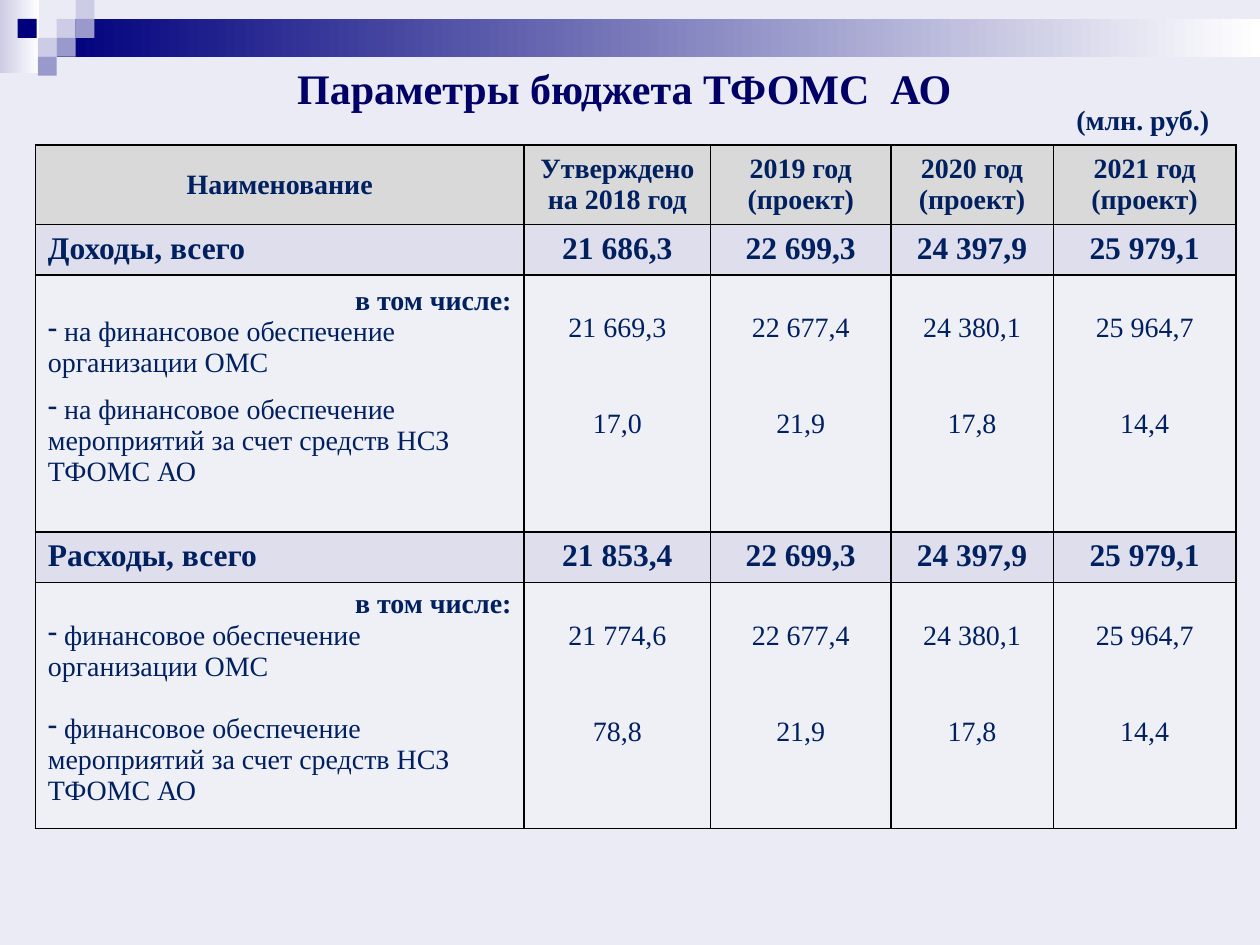
"""Build the budget parameters slide: decorative header band, title and budget table."""
import dataclasses

import lxml.etree
import pptx
import pptx.dml.color
import pptx.enum.shapes
import pptx.enum.text
import pptx.oxml.ns
import pptx.util

Inches = pptx.util.Inches
Pt = pptx.util.Pt
Align = pptx.enum.text.PP_ALIGN
Anchor = pptx.enum.text.MSO_ANCHOR


@dataclasses.dataclass(frozen=True)
class Theme:
    font: str = "Times New Roman"
    background: str = "EBEBF5"
    navy: str = "00007D"
    lilac: str = "CCCCE6"
    violet: str = "9999CC"
    white: str = "FFFFFF"
    title: str = "000066"
    ink: str = "002060"
    header: str = "D9D9D9"
    total: str = "DEDEEC"
    detail: str = "EFEFF6"
    border: str = "000000"
    title_size: int = 24
    total_size: int = 18
    body_size: int = 16


def rgb(code):
    return pptx.dml.color.RGBColor.from_string(code)


class BudgetSlide:
    def __init__(self, deck, theme):
        self.theme = theme
        self.slide = deck.slides.add_slide(deck.slide_layouts[6])
        self.slide.background.fill.solid()
        self.slide.background.fill.fore_color.rgb = rgb(theme.background)

    def block(self, left, top, width, height, color, fade_to=None):
        rectangle = self.slide.shapes.add_shape(
            pptx.enum.shapes.MSO_SHAPE.RECTANGLE,
            Inches(left), Inches(top), Inches(width), Inches(height))
        rectangle.shadow.inherit = False
        rectangle.line.fill.background()
        if fade_to is None:
            rectangle.fill.solid()
            rectangle.fill.fore_color.rgb = rgb(color)
        else:
            rectangle.fill.gradient()
            rectangle.fill.gradient_angle = 0
            for stop, code in zip(rectangle.fill.gradient_stops, (color, fade_to)):
                stop.color.rgb = rgb(code)

    def style(self, paragraph, size, color, bold, align):
        paragraph.alignment = align
        for run in paragraph.runs:
            run.font.name = self.theme.font
            run.font.size = Pt(size)
            run.font.bold = bold
            run.font.color.rgb = rgb(color)

    def caption(self, left, top, width, height, text, size, color):
        frame = self.slide.shapes.add_textbox(
            Inches(left), Inches(top), Inches(width), Inches(height)).text_frame
        frame.word_wrap = True
        frame.vertical_anchor = Anchor.MIDDLE
        frame.text = text
        self.style(frame.paragraphs[0], size, color, True, Align.CENTER)

    def table(self, left, top, widths, heights):
        grid = self.slide.shapes.add_table(
            len(heights), len(widths), Inches(left), Inches(top),
            Inches(sum(widths)), Inches(sum(heights))).table
        for column, width in zip(grid.columns, widths):
            column.width = Inches(width)
        for row, height in zip(grid.rows, heights):
            row.height = Inches(height)
        return grid

    def cell(self, cell, text, fill, size, bold=False, align=Align.CENTER,
             anchor=Anchor.TOP, top=0.05, side=0.1):
        properties = cell._tc.get_or_add_tcPr()
        for edge in ("a:lnL", "a:lnR", "a:lnT", "a:lnB"):
            line = lxml.etree.SubElement(properties, pptx.oxml.ns.qn(edge), w=str(Pt(1)))
            solid = lxml.etree.SubElement(line, pptx.oxml.ns.qn("a:solidFill"))
            lxml.etree.SubElement(solid, pptx.oxml.ns.qn("a:srgbClr"), val=self.theme.border)
        cell.fill.solid()
        cell.fill.fore_color.rgb = rgb(fill)
        cell.vertical_anchor = anchor
        cell.margin_top = Inches(top)
        cell.margin_left = cell.margin_right = Inches(side)
        cell.text_frame.text = text
        for paragraph in cell.text_frame.paragraphs:
            self.style(paragraph, size, self.theme.ink, bold, align)
        return cell.text_frame.paragraphs

    def header_row(self, cells, labels):
        for cell, label in zip(cells, labels):
            self.cell(cell, label, self.theme.header, self.theme.body_size, True,
                      anchor=Anchor.MIDDLE, side=0.04)

    def total_row(self, cells, name, amounts):
        for index, (cell, text) in enumerate(zip(cells, [name, *amounts])):
            self.cell(cell, text, self.theme.total, self.theme.total_size, True,
                      Align.CENTER if index else Align.LEFT)

    def detail_row(self, cells, items, amounts, top, gap):
        name_cell, *amount_cells = cells
        size, fill = self.theme.body_size, self.theme.detail
        lead, *entries = self.cell(name_cell, "\n".join(["в том числе:", *items]),
                                   fill, size, align=Align.LEFT, top=top)
        self.style(lead, size, self.theme.ink, True, Align.RIGHT)
        for entry in entries:
            properties = entry._p.get_or_add_pPr()
            properties.set("marL", "0")
            properties.set("indent", "0")
            lxml.etree.SubElement(properties, pptx.oxml.ns.qn("a:buChar"), char="-")
        entries[-1].space_before = Pt(gap)
        for cell, pair in zip(amount_cells, amounts):
            lines = self.cell(cell, "\n".join(pair), fill, size, top=0.3)
            lines[-1].space_before = Pt(37)


def main():
    deck = pptx.Presentation()
    deck.slide_width, deck.slide_height = Inches(10), Inches(7.5)
    theme = Theme()
    budget = BudgetSlide(deck, theme)

    budget.block(0, 0, 0.31, 0.58, theme.lilac, theme.white)
    budget.block(0.45, 0.15, 9.55, 0.3, theme.navy, theme.white)
    mosaic = [(0.45, 0.15, theme.lilac), (0.6, 0, theme.lilac),
              (0.6, 0.15, theme.violet), (0.3, 0.3, theme.lilac),
              (0.14, 0.15, theme.navy), (0.45, 0.3, theme.violet),
              (0.3, 0.45, theme.violet)]
    for left, top, color in mosaic:
        budget.block(left, top, 0.15, 0.15, color)

    budget.caption(0.35, 0.42, 9.21, 0.55, "Параметры бюджета ТФОМС  АО",
                   theme.title_size, theme.title)

    grid = budget.table(0.28, 1.15, [3.88, 1.48, 1.43, 1.29, 1.45],
                        [0.61, 0.39, 2.04, 0.39, 1.95])
    header, income, income_parts, spending, spending_parts = (
        list(row.cells) for row in grid.rows)
    years = [f"{year} год (проект)" for year in (2019, 2020, 2021)]
    budget.header_row(header, ["Наименование", "Утверждено\nна 2018 год", *years])

    planned_totals = ["22 699,3", "24 397,9", "25 979,1"]
    planned_parts = [("22 677,4", "21,9"), ("24 380,1", "17,8"), ("25 964,7", "14,4")]
    purposes = ["финансовое обеспечение организации ОМС",
                "финансовое обеспечение мероприятий за счет средств НСЗ ТФОМС АО"]
    budget.total_row(income, "Доходы, всего", ["21 686,3", *planned_totals])
    budget.detail_row(income_parts, [f" на {purpose}" for purpose in purposes],
                      [("21 669,3", "17,0"), *planned_parts], top=0.08, gap=9)
    budget.total_row(spending, "Расходы, всего", ["21 853,4", *planned_totals])
    budget.detail_row(spending_parts, [f" {purpose}" for purpose in purposes],
                      [("21 774,6", "78,8"), *planned_parts], top=0.05, gap=18)

    budget.caption(8.14, 0.76, 1.86, 0.37, "(млн. руб.)", theme.body_size, theme.ink)
    deck.save("out.pptx")


if __name__ == "__main__":
    main()
